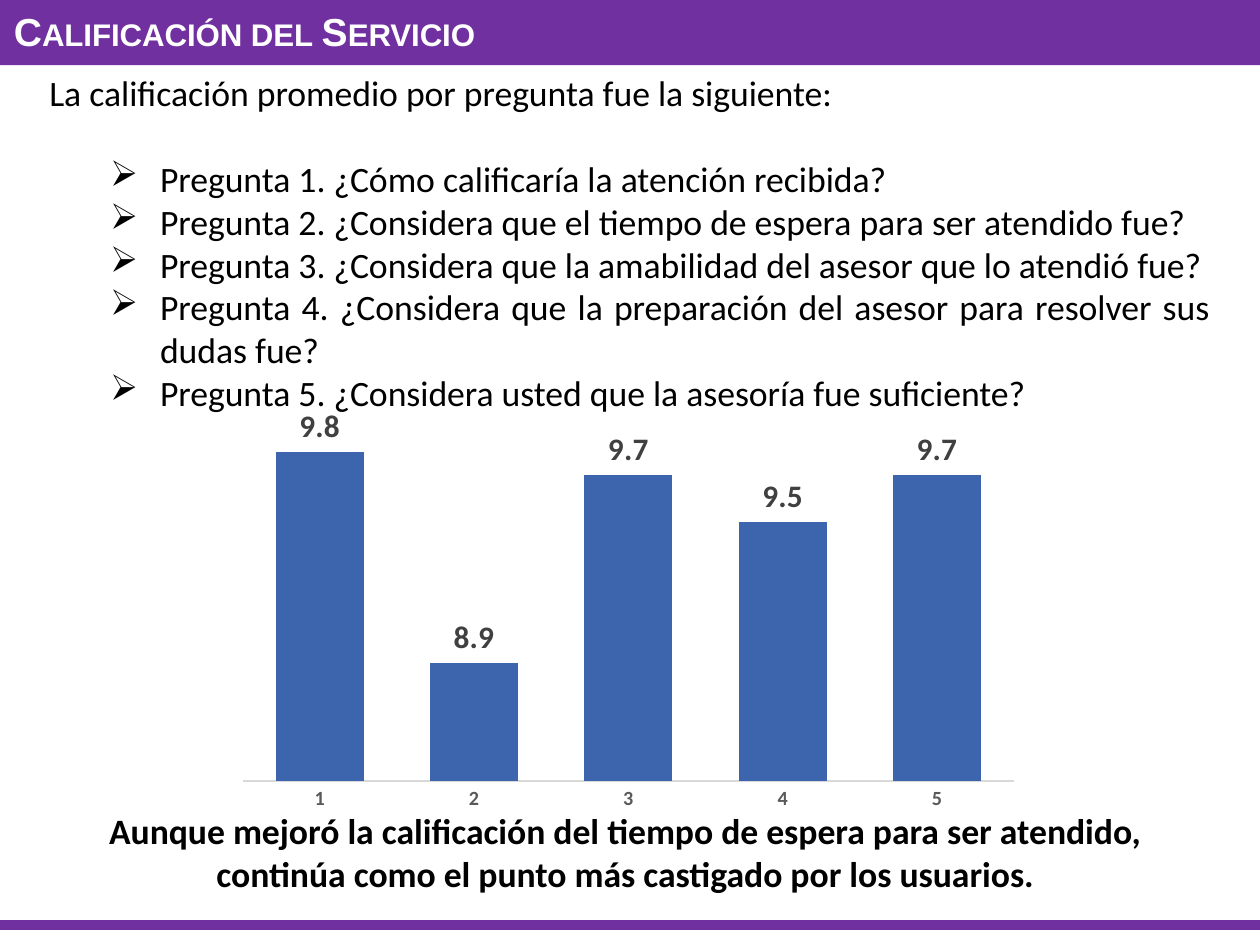
"""Build the service rating slide with its questions and average score chart."""
import pptx
import pptx.chart.data
import pptx.dml.color
import pptx.enum.chart
import pptx.enum.shapes
import pptx.enum.text
import pptx.oxml
import pptx.oxml.ns
import pptx.util
import lxml.etree

Cm = pptx.util.Cm
Pt = pptx.util.Pt
RGBColor = pptx.dml.color.RGBColor
Align = pptx.enum.text.PP_ALIGN
qn = pptx.oxml.ns.qn

PURPLE = RGBColor(0x70, 0x30, 0xA0)
BLUE = RGBColor(0x3C, 0x65, 0xAE)
WHITE = RGBColor(0xFF, 0xFF, 0xFF)
BLACK = RGBColor(0x00, 0x00, 0x00)
LABEL_GRAY = RGBColor(0x40, 0x40, 0x40)
AXIS_GRAY = RGBColor(0x59, 0x59, 0x59)
LINE_GRAY = RGBColor(0xD9, 0xD9, 0xD9)

QUESTIONS = [
    "Pregunta 1. ¿Cómo calificaría la atención recibida?",
    "Pregunta 2. ¿Considera que el tiempo de espera para ser atendido fue?",
    "Pregunta 3. ¿Considera que la amabilidad del asesor que lo atendió fue?",
    "Pregunta 4. ¿Considera que la preparación del asesor para resolver sus dudas fue?",
    "Pregunta 5. ¿Considera usted que la asesoría fue suficiente?",
]
SCORES = [9.8, 8.9, 9.7, 9.5, 9.7]


def style_font(font, size, color, bold=False, name="Calibri"):
    font.size = Pt(size)
    font.bold = bold
    font.color.rgb = color
    font.name = name


def add_text(left, top, width, height, lines, alignment):
    text_frame = slide.shapes.add_textbox(Cm(left), Cm(top), Cm(width), Cm(height)).text_frame
    text_frame.word_wrap = True
    text_frame.text = "\n".join(lines)
    for paragraph in text_frame.paragraphs:
        paragraph.alignment = alignment
    return text_frame.paragraphs


presentation = pptx.Presentation()
presentation.slide_width = Cm(19.91)
presentation.slide_height = Cm(14.94)
slide = presentation.slides.add_slide(presentation.slide_layouts[6])

footer_line = slide.shapes.add_connector(
    pptx.enum.shapes.MSO_CONNECTOR.STRAIGHT, Cm(0), Cm(14.63), Cm(19.91), Cm(14.63))
footer_line.line.color.rgb = PURPLE
footer_line.line.width = Pt(4.5)
lxml.etree.SubElement(footer_line._element.spPr, qn("a:effectLst"))

title_band = slide.shapes.add_shape(
    pptx.enum.shapes.MSO_SHAPE.RECTANGLE, Cm(0), Cm(0), Cm(19.91), Cm(1.03))
title_band.shadow.inherit = False
title_band.fill.solid()
title_band.fill.fore_color.rgb = PURPLE
title_band.line.fill.background()

title = add_text(-0.03, 0, 19.79, 1.03, ["Calificación del Servicio"], Align.LEFT)[0]
title_run = title.runs[0]
style_font(title_run.font, 17.5, WHITE, True, "Arial")
title_properties = title_run.font._element
title_properties.set("cap", "small")
title_shadow = pptx.oxml.parse_xml(
    '<a:effectLst xmlns:a="http://schemas.openxmlformats.org/drawingml/2006/main">'
    '<a:outerShdw blurRad="38100" dist="38100" dir="2700000" algn="tl">'
    '<a:srgbClr val="000000"><a:alpha val="43000"/></a:srgbClr>'
    '</a:outerShdw></a:effectLst>')
title_properties.find(qn("a:solidFill")).addnext(title_shadow)

introduction, *questions = add_text(
    0.53, 0.99, 18.85, 6.07,
    ["La calificación promedio por pregunta fue la siguiente:", *QUESTIONS], Align.JUSTIFY)
introduction.space_after = Pt(19.5)
for question in questions:
    properties = question._element.get_or_add_pPr()
    properties.set("marL", str(Cm(1.75)))
    properties.set("indent", str(Cm(-0.79)))
    lxml.etree.SubElement(properties, qn("a:buChar")).set("char", "➢")
for paragraph in [introduction, *questions]:
    style_font(paragraph.runs[0].font, 16, BLACK)

chart_data = pptx.chart.data.CategoryChartData(number_format="0.0")
chart_data.categories = [str(number) for number in range(1, len(SCORES) + 1)]
chart_data.add_series("Calificación", SCORES)
chart = slide.shapes.add_chart(
    pptx.enum.chart.XL_CHART_TYPE.COLUMN_CLUSTERED,
    Cm(3.58), Cm(6.27), Cm(12.7), Cm(6.68), chart_data).chart
chart.has_legend = False
chart.has_title = False
style_font(chart.font, 10, BLACK)

category_axis = chart.category_axis
category_axis.major_tick_mark = pptx.enum.chart.XL_TICK_MARK.NONE
category_axis.format.line.color.rgb = LINE_GRAY
category_axis.format.line.width = Pt(0.75)
style_font(category_axis.tick_labels.font, 9, AXIS_GRAY, True)
value_axis = chart.value_axis
value_axis.minimum_scale = 8.4
value_axis.maximum_scale = 10
value_axis.has_major_gridlines = False
value_axis.visible = False

plot = chart.plots[0]
plot.gap_width = 75
plot.vary_by_categories = False
series = plot.series[0]
series.format.fill.solid()
series.format.fill.fore_color.rgb = BLUE
labels = series.data_labels
labels.show_value = True
labels.number_format = "0.0"
labels.number_format_is_linked = False
labels.position = pptx.enum.chart.XL_LABEL_POSITION.OUTSIDE_END
style_font(labels.font, 14, LABEL_GRAY, True)

plot_area = chart._chartSpace.chart.plotArea
for old_layout in plot_area.findall(qn("c:layout")):
    plot_area.remove(old_layout)
layout = lxml.etree.Element(qn("c:layout"))
manual_layout = lxml.etree.SubElement(layout, qn("c:manualLayout"))
for tag, value in [("layoutTarget", "inner"), ("xMode", "edge"), ("yMode", "edge"),
                   ("x", "0.02"), ("y", "0.02"), ("w", "0.96"), ("h", "0.89")]:
    lxml.etree.SubElement(manual_layout, qn("c:" + tag)).set("val", value)
plot_area.insert(0, layout)

conclusion = add_text(
    0.46, 12.67, 18.85, 1.63,
    ["Aunque mejoró la calificación del tiempo de espera para ser atendido, "
     "continúa como el punto más castigado por los usuarios."], Align.CENTER)[0]
style_font(conclusion.runs[0].font, 16, BLACK, True)

presentation.save("out.pptx")
